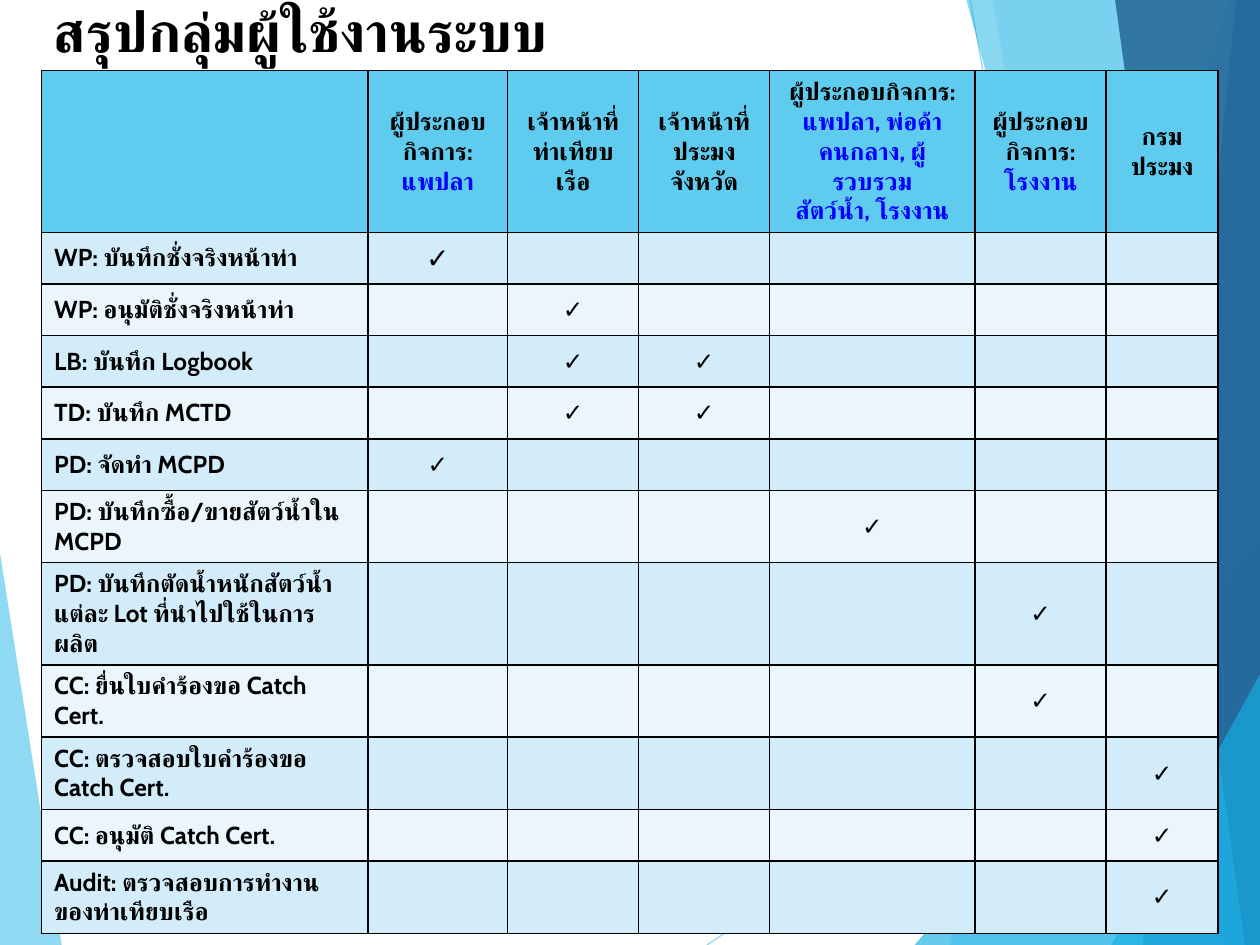
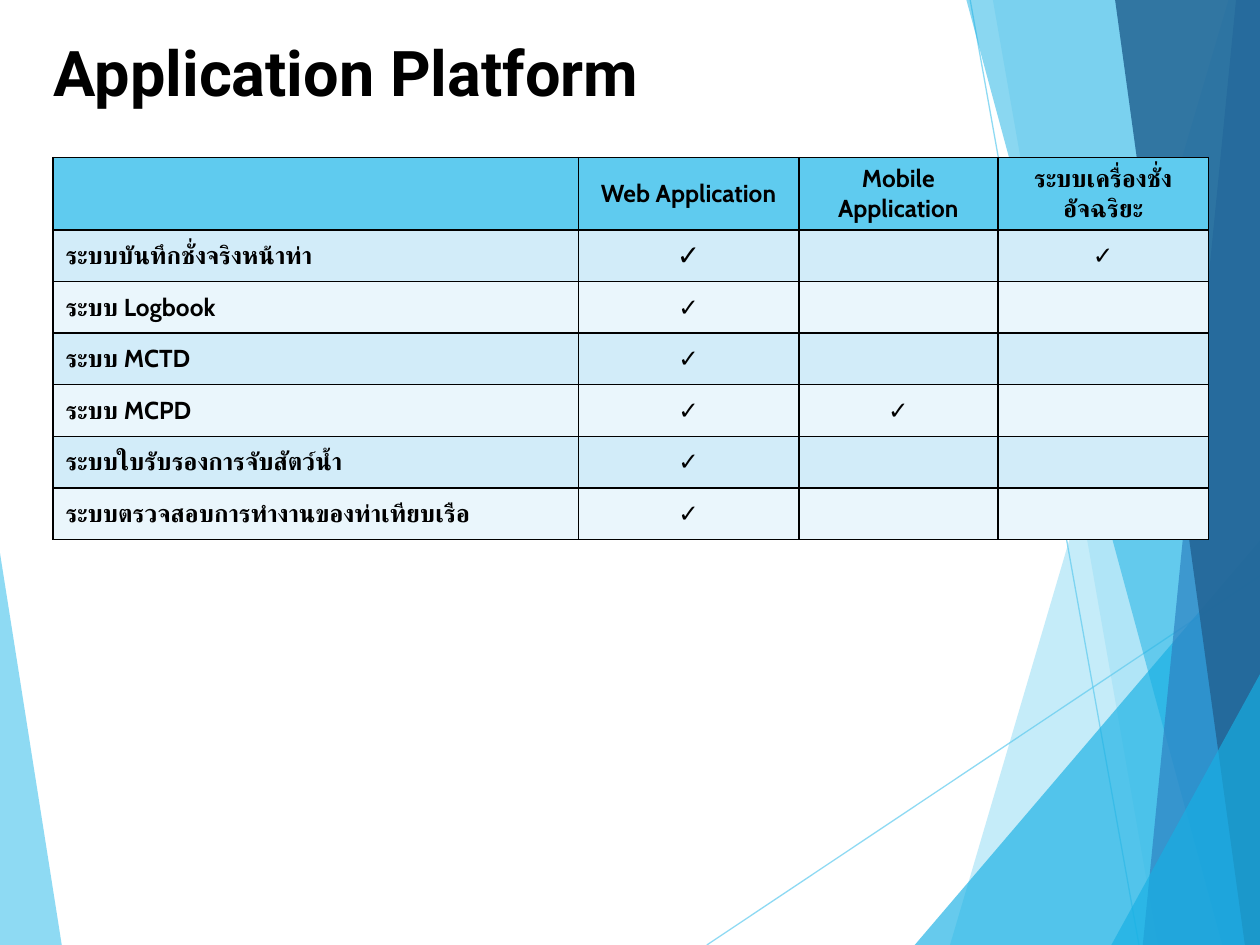
from lxml.etree import SubElement
from pptx import Presentation
from pptx.dml.color import RGBColor
from pptx.enum.shapes import MSO_CONNECTOR as Connector
from pptx.enum.text import MSO_ANCHOR as Anchor, PP_ALIGN as Align
from pptx.oxml.ns import qn
from pptx.util import Inches, Pt

WIDTH, HEIGHT = 10, 7.5
ROW_HEIGHT = 0.41
TITLE_LEFT, TITLE_WIDTH = 0.33, 8.83
TITLE_FONT, TABLE_FONT = "Roboto", "Cabin"
TEXT_SIZE, FIRST_TICK_SIZE = 14, 16
TICK = "✓"

COLOURS = {
    "black": "000000",
    "highlight": "0000FF",
    "sky": "5FCBEF",
    "cyan": "17B0E4",
    "blue": "2E83C3",
    "navy": "226292",
    "band_dark": "D2ECF9",
    "band_light": "EAF6FC",
}

# Backdrop: start and end of each thin line
RAYS = [
    ((5.61, HEIGHT), (WIDTH, 4.57)),
    ((7.7, 0), (9.04, HEIGHT)),
]
RAY_OPACITY = 70

# Backdrop: colour, opacity in percent, corners
FACETS = [
    ("sky", 70, [(0, 4.39), (0.49, HEIGHT), (0, HEIGHT)]),
    ("sky", 36, [(9.75, 0), (7.54, HEIGHT), (WIDTH, HEIGHT), (WIDTH, 0)]),
    ("sky", 20, [(7.88, 0), (9.19, HEIGHT), (WIDTH, HEIGHT), (WIDTH, 0)]),
    ("cyan", 66, [(7.26, HEIGHT), (WIDTH, 4.29), (WIDTH, HEIGHT)]),
    ("cyan", 50, [(7.67, 0), (9.7, HEIGHT), (WIDTH, HEIGHT), (WIDTH, 0)]),
    ("blue", 70, [(9.81, 0), (9.07, HEIGHT), (WIDTH, HEIGHT), (WIDTH, 0)]),
    ("navy", 82, [(8.85, 0), (9.88, HEIGHT), (WIDTH, HEIGHT), (WIDTH, 0)]),
    ("cyan", 66, [(8.82, HEIGHT), (WIDTH, 5.35), (WIDTH, HEIGHT)]),
]

# Headers: plain lines, then highlighted lines. Rows: label, then ticked columns.
PAGES = [
    {
        "title": "สรุปกลุ่มผู้ใช้งานระบบ",
        "title_top": -0.08, "title_height": 0.64, "title_size": 32,
        "table_at": (0.33, 0.56),
        "columns": [2.59, 1.11, 1.04, 1.04, 1.63, 1.04, 0.89],
        "headers": [
            (["ผู้ประกอบกิจการ:"], ["แพปลา"]),
            (["เจ้าหน้าที่ ท่าเทียบเรือ"], []),
            (["เจ้าหน้าที่ประมงจังหวัด"], []),
            (["ผู้ประกอบกิจการ:"],
             ["แพปลา, พ่อค้าคนกลาง, ผู้รวบรวม", "สัตว์น้ำ, โรงงาน"]),
            (["ผู้ประกอบกิจการ:"], ["โรงงาน"]),
            (["กรมประมง"], []),
        ],
        "rows": [
            ("WP: บันทึกชั่งจริงหน้าท่า", [1]),
            ("WP: อนุมัติชั่งจริงหน้าท่า", [2]),
            ("LB: บันทึก Logbook", [2, 3]),
            ("TD: บันทึก MCTD", [2, 3]),
            ("PD: จัดทำ MCPD", [1]),
            ("PD: บันทึกซื้อ/ขายสัตว์น้ำใน MCPD", [4]),
            ("PD: บันทึกตัดน้ำหนักสัตว์น้ำแต่ละ Lot ที่นำไปใช้ในการผลิต", [5]),
            ("CC: ยื่นใบคำร้องขอ Catch Cert.", [5]),
            ("CC: ตรวจสอบใบคำร้องขอ Catch Cert.", [6]),
            ("CC: อนุมัติ Catch Cert.", [6]),
            ("Audit: ตรวจสอบการทำงานของท่าเทียบเรือ", [6]),
        ],
    },
    {
        "title": "Application Platform",
        "title_top": 0.17, "title_height": 0.8, "title_size": 36,
        "table_at": (0.42, 1.25),
        "columns": [4.17, 1.75, 1.58, 1.67],
        "headers": [
            (["Web Application"], []),
            (["Mobile Application"], []),
            (["ระบบเครื่องชั่งอัจฉริยะ"], []),
        ],
        "rows": [
            ("ระบบบันทึกชั่งจริงหน้าท่า", [1, 3]),
            ("ระบบ Logbook", [1]),
            ("ระบบ MCTD", [1]),
            ("ระบบ MCPD", [1, 2]),
            ("ระบบใบรับรองการจับสัตว์น้ำ", [1]),
            ("ระบบตรวจสอบการทำงานของท่าเทียบเรือ", [1]),
        ],
    },
]


def paint(fill, colour, opacity=100):
    fill.solid()
    fill.fore_color.rgb = RGBColor.from_string(COLOURS[colour])
    if opacity < 100:
        solid = fill._xPr.find(qn("a:solidFill"))
        SubElement(solid[0], qn("a:alpha"), val=str(opacity * 1000))


def write(frame, lines, size, font, align=Align.LEFT):
    """Fill a text frame with bold paragraphs, given as (text, colour) pairs."""
    for index, (text, colour) in enumerate(lines):
        para = frame.add_paragraph() if index else frame.paragraphs[0]
        para.text = text
        para.alignment = align
        para.font.size = Pt(size)
        para.font.bold = True
        para.font.color.rgb = RGBColor.from_string(COLOURS[colour])
        para.font.name = font
        # Thai takes its font from the complex-script slot
        defaults = para._p.pPr.find(qn("a:defRPr"))
        SubElement(defaults, qn("a:cs"), typeface=font)


def draw_backdrop(page):
    for start, end in RAYS:
        ray = page.shapes.add_connector(
            Connector.STRAIGHT, *map(Inches, start + end))
        ray.line.width = Pt(0.75)
        paint(ray.line.fill, "sky", RAY_OPACITY)
        SubElement(ray._element.spPr, qn("a:effectLst"))
    for colour, opacity, corners in FACETS:
        first, *others = [tuple(map(Inches, corner)) for corner in corners]
        builder = page.shapes.build_freeform(*first)
        builder.add_line_segments(others, close=True)
        facet = builder.convert_to_shape()
        facet.shadow.inherit = False
        facet.line.fill.background()
        paint(facet.fill, colour, opacity)


def draw_title(page, content):
    box = page.shapes.add_textbox(*map(Inches, (
        TITLE_LEFT, content["title_top"], TITLE_WIDTH, content["title_height"])))
    box.text_frame.word_wrap = True
    box.text_frame.vertical_anchor = Anchor.MIDDLE
    write(box.text_frame, [(content["title"], "black")],
          content["title_size"], TITLE_FONT)


def style_cell(cell, colour):
    cell.vertical_anchor = Anchor.MIDDLE
    properties = cell._tc.get_or_add_tcPr()
    for side in ("lnL", "lnR", "lnT", "lnB"):
        border = SubElement(properties, qn(f"a:{side}"), w=str(Pt(1)))
        solid = SubElement(border, qn("a:solidFill"))
        SubElement(solid, qn("a:srgbClr"), val=COLOURS["black"])
    paint(cell.fill, colour)


def draw_table(page, content):
    columns, rows = content["columns"], content["rows"]
    count = len(rows) + 1
    left, top = content["table_at"]
    table = page.shapes.add_table(count, len(columns), *map(Inches, (
        left, top, sum(columns), count * ROW_HEIGHT))).table
    for column, width in zip(table.columns, columns):
        column.width = Inches(width)
    for index, row in enumerate(table.rows):
        row.height = Inches(ROW_HEIGHT)
        band = "sky" if index == 0 else "band_dark" if index % 2 else "band_light"
        for cell in row.cells:
            style_cell(cell, band)

    for column, (plain, highlighted) in enumerate(content["headers"], start=1):
        lines = [(text, "black") for text in plain]
        lines += [(text, "highlight") for text in highlighted]
        write(table.cell(0, column).text_frame, lines,
              TEXT_SIZE, TABLE_FONT, Align.CENTER)
    for row, (label, ticked) in enumerate(rows, start=1):
        write(table.cell(row, 0).text_frame, [(label, "black")],
              TEXT_SIZE, TABLE_FONT)
        for column in ticked:
            size = FIRST_TICK_SIZE if row == column == 1 else TEXT_SIZE
            write(table.cell(row, column).text_frame, [(TICK, "black")],
                  size, TABLE_FONT, Align.CENTER)


def main():
    deck = Presentation()
    deck.slide_width, deck.slide_height = Inches(WIDTH), Inches(HEIGHT)
    blank = deck.slide_layouts[6]
    for content in PAGES:
        page = deck.slides.add_slide(blank)
        draw_backdrop(page)
        draw_table(page, content)
        draw_title(page, content)
    deck.save("out.pptx")


if __name__ == "__main__":
    main()
